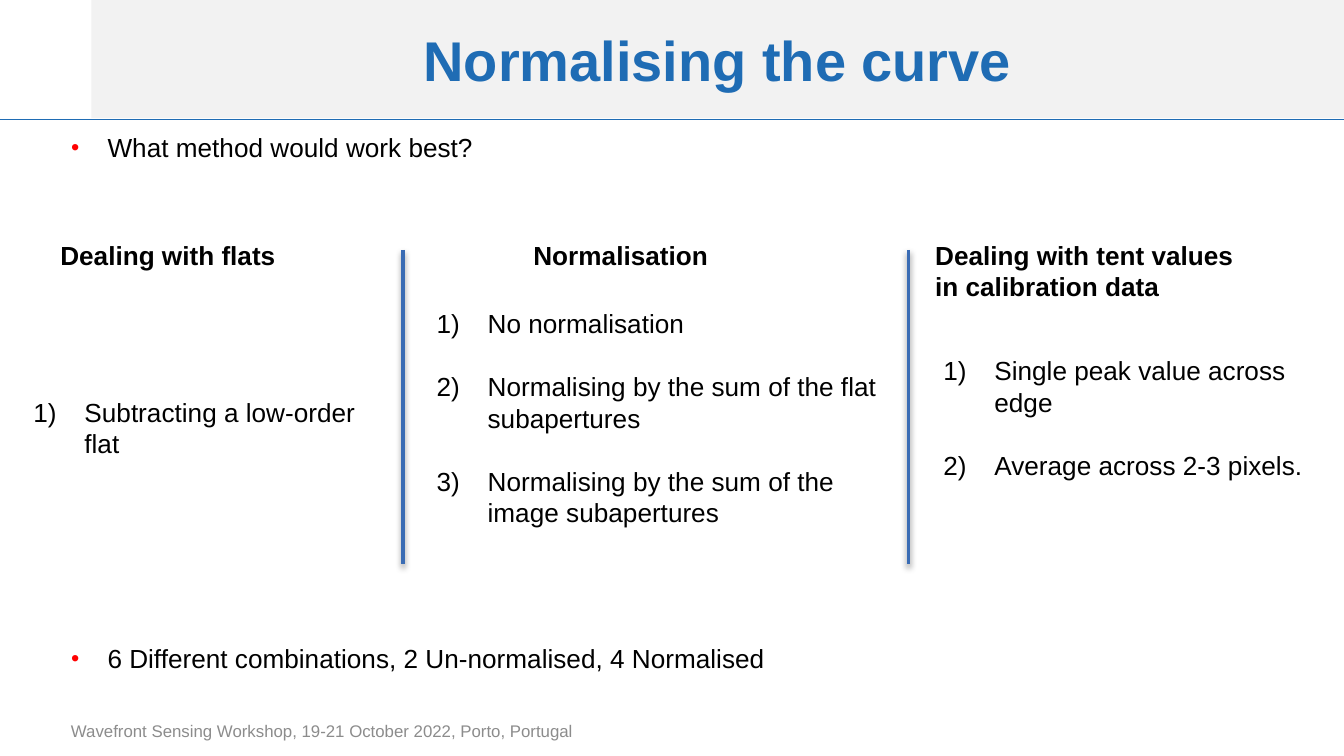
"""Build the slide on normalising the curve."""
import lxml.etree
import pptx
import pptx.dml.color
import pptx.enum.shapes
import pptx.enum.text
import pptx.oxml
import pptx.oxml.ns
import pptx.util

Inches = pptx.util.Inches
Pt = pptx.util.Pt
SLIDE_WIDTH = 10
SLIDE_HEIGHT = SLIDE_WIDTH * 9 / 16
BLUE = "1F6CB4"
DIVIDER_BLUE = "3A6CB4"
BULLET = (
    '<a:buClr><a:srgbClr val="FF0000"/></a:buClr><a:buSzPct val="90000"/>'
    '<a:buFont typeface="Arial"/><a:buChar char="•"/>'
)
NUMBER = '<a:buFont typeface="+mj-lt"/><a:buAutoNum type="arabicParenR"/>'
SHADOW = (
    '<a:outerShdw blurRad="40000" dist="20000" dir="5400000" rotWithShape="0">'
    '<a:srgbClr val="000000"><a:alpha val="38000"/></a:srgbClr></a:outerShdw>'
)


def colour(value):
    """Return the colour for a hex string."""
    return pptx.dml.color.RGBColor.from_string(value)


def parse_elements(markup):
    """Return the drawing elements written in the markup."""
    namespace = pptx.oxml.ns.nsdecls("a")
    return list(pptx.oxml.parse_xml(f"<a:root {namespace}>{markup}</a:root>"))


def place(shape, left, top, width, height):
    """Move and size a shape in inches."""
    shape.left, shape.top = Inches(left), Inches(top)
    shape.width, shape.height = Inches(width), Inches(height)


def write_text(shape, lines, size=14, hex_colour="000000", bold=False,
               align="LEFT", anchor="TOP", wrap=True, fit=False,
               marker="", indent=0, gap=0):
    """Fill a shape with one formatted paragraph for each line."""
    frame = shape.text_frame
    frame.word_wrap = wrap
    sizing = pptx.enum.text.MSO_AUTO_SIZE
    frame.auto_size = sizing.SHAPE_TO_FIT_TEXT if fit else sizing.NONE
    frame.vertical_anchor = pptx.enum.text.MSO_ANCHOR[anchor]
    for index, line in enumerate(lines):
        paragraph = frame.add_paragraph() if index else frame.paragraphs[0]
        if marker:
            properties = paragraph._p.get_or_add_pPr()
            properties.set("marL", str(Inches(indent)))
            properties.set("indent", str(-Inches(indent)))
            properties.extend(parse_elements(marker))
        paragraph.alignment = pptx.enum.text.PP_ALIGN[align]
        paragraph.space_before = Pt(gap if index else 0)
        run = paragraph.add_run()
        run.text = line
        run.font.name = "Arial"
        run.font.size = Pt(size)
        run.font.bold = bold
        run.font.color.rgb = colour(hex_colour)


def add_text(slide, box, lines, **text_format):
    """Add a text box with formatted lines."""
    shape = slide.shapes.add_textbox(*map(Inches, box))
    write_text(shape, lines, **text_format)


def add_line(slide, start, end, hex_colour, width, effect=""):
    """Add a straight line with an optional effect."""
    line = slide.shapes.add_connector(
        pptx.enum.shapes.MSO_CONNECTOR.STRAIGHT, *map(Inches, start + end))
    line.line.color.rgb = colour(hex_colour)
    line.line.width = Pt(width)
    effects = lxml.etree.SubElement(
        line._element.spPr, pptx.oxml.ns.qn("a:effectLst"))
    effects.extend(parse_elements(effect))


def add_title(slide, text):
    """Fill the title placeholder as a shaded band."""
    title = slide.shapes.title
    place(title, 0.68, 0, 9.32, 0.88)
    title.fill.solid()
    title.fill.fore_color.rgb = colour("F2F2F2")
    write_text(title, [text], size=30, hex_colour=BLUE, bold=True,
               align="CENTER", anchor="MIDDLE")


def add_bullet(slide, index, top, height, text):
    """Fill a body placeholder with one bullet."""
    body = slide.placeholders[index]
    place(body, 0.43, top, 9.57, height)
    write_text(body, [text], marker=BULLET, indent=0.27)


def add_column(slide, heading_box, heading, list_box, items):
    """Add a bold heading and its numbered list."""
    add_text(slide, heading_box, heading, bold=True, wrap=False, fit=True)
    add_text(slide, list_box, items, fit=True, marker=NUMBER, indent=0.38, gap=17)


def main():
    """Build and save the presentation."""
    presentation = pptx.Presentation()
    presentation.slide_width = Inches(SLIDE_WIDTH)
    presentation.slide_height = Inches(SLIDE_HEIGHT)
    slide = presentation.slides.add_slide(presentation.slide_layouts[3])

    add_line(slide, (0, 0.89), (SLIDE_WIDTH, 0.89), BLUE, 0.75)
    add_title(slide, "Normalising the curve")
    add_bullet(slide, 1, 0.93, 0.52, "What method would work best?")
    add_bullet(slide, 2, 4.73, 0.59,
               "6 Different combinations, 2 Un-normalised, 4 Normalised")

    add_column(slide, (0.35, 1.73, 1.81, 0.34), ["Dealing with flats"],
               (0.15, 2.9, 2.68, 0.57), ["Subtracting a low-order flat"])
    add_column(slide, (3.87, 1.73, 1.51, 0.34), ["Normalisation"],
               (3.15, 2.24, 3.52, 1.75),
               ["No normalisation",
                "Normalising by the sum of the flat subapertures",
                "Normalising by the sum of the image subapertures"])
    add_column(slide, (6.86, 1.73, 2.43, 0.57),
               ["Dealing with tent values", "in calibration data"],
               (6.92, 2.59, 3.08, 1.04),
               ["Single peak value across edge", "Average across 2-3 pixels."])
    for left in (3, 6.76):
        add_line(slide, (left, 1.86), (left, 4.2), DIVIDER_BLUE, 2, SHADOW)

    add_text(slide, (0.43, 5.29, 5.26, 0.3),
             ["Wavefront Sensing Workshop, 19-21 October 2022, Porto, Portugal"],
             size=9, hex_colour="8C8C8C", anchor="MIDDLE")
    presentation.save("out.pptx")


if __name__ == "__main__":
    main()
